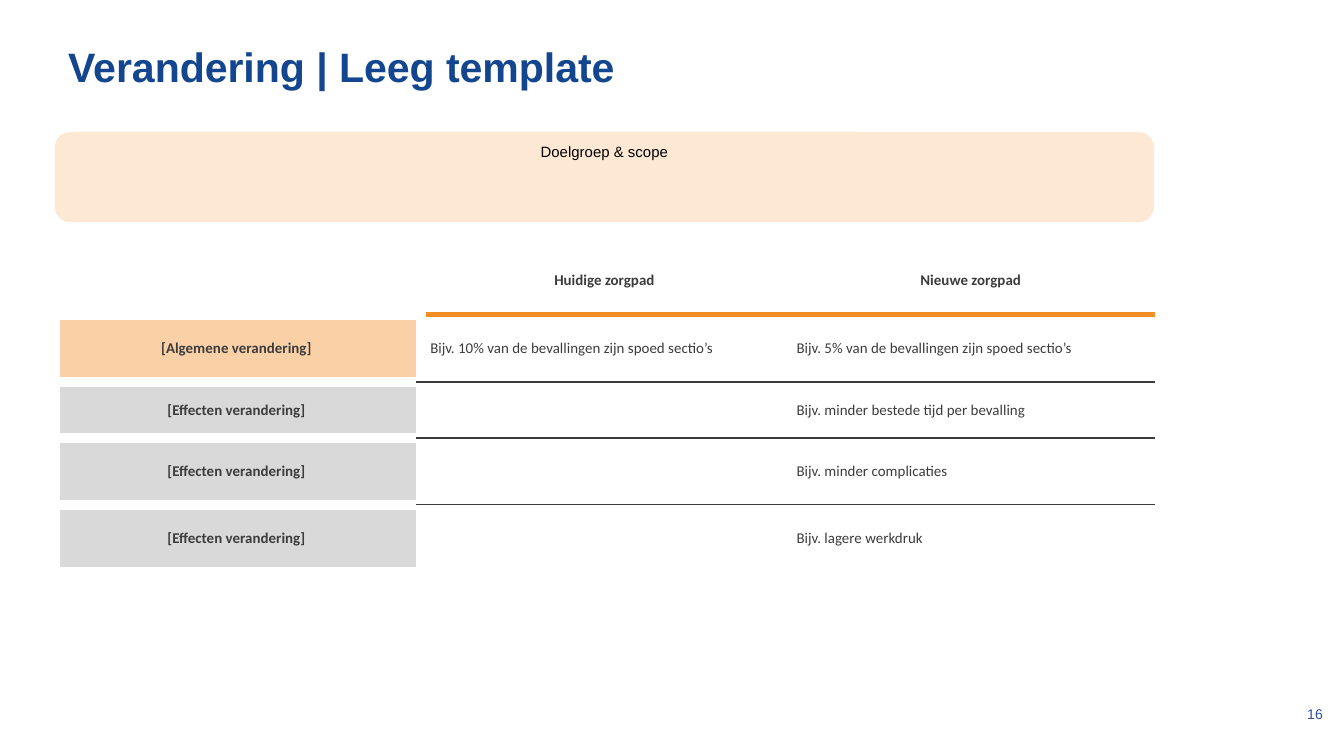
from dataclasses import dataclass

from lxml.etree import SubElement
from pptx import Presentation
from pptx.dml.color import RGBColor
from pptx.enum.shapes import MSO_SHAPE as Shape
from pptx.enum.text import MSO_ANCHOR as Anchor, PP_ALIGN as Align
from pptx.oxml.ns import qn
from pptx.util import Emu, Pt

PIXELS_PER_INCH = 134.4
WHITE, ORANGE, DARK = "FFFFFF", "F38D24", "3C3C3C"
PEACH, GREY = "FAD1A7", "D9D9D9"
LEFT, WIDTH = 55, 1099


@dataclass(frozen=True)
class Line:
    color: str
    points: float


@dataclass(frozen=True)
class Row:
    height: int
    label: str
    current: str
    new: str
    label_fill: str | None
    bottom: Line


GAP = Line(WHITE, 6.3)
FINE = Line(WHITE, 1.05)
ACCENT = Line(ORANGE, 3)
RULE = Line(DARK, 0.75)
EFFECT = "[Effecten verandering] "

ROWS = [
    Row(70, "", "Huidige zorgpad", "Nieuwe zorgpad", None, ACCENT),
    Row(67, "[Algemene verandering] ",
        "Bijv. 10% van de bevallingen zijn spoed sectio’s",
        "Bijv. 5% van de bevallingen zijn spoed sectio’s", PEACH, RULE),
    Row(56, EFFECT, "", "Bijv. minder bestede tijd per bevalling", GREY, RULE),
    Row(67, EFFECT, "", "Bijv. minder complicaties", GREY, RULE),
    Row(67, EFFECT, "", "Bijv. lagere werkdruk", GREY, GAP),
]


def px(length: int) -> Emu:
    return Emu(round(length * 914400 / PIXELS_PER_INCH))


def rgb(color: str) -> RGBColor:
    return RGBColor.from_string(color)


def write(frame, text: str, size: float, font: str, color: str,
          bold: bool = False, align: Align = Align.LEFT) -> None:
    frame.word_wrap = True
    paragraph = frame.paragraphs[0]
    paragraph.text = text
    paragraph.alignment = align
    paragraph.font.size = Pt(size)
    paragraph.font.name = font
    paragraph.font.bold = bold
    paragraph.font.color.rgb = rgb(color)


def add_text(slide, left: int, top: int, width: int, height: int, text: str,
             size: float, color: str, bold: bool, anchor: Anchor) -> None:
    box = slide.shapes.add_textbox(px(left), px(top), px(width), px(height))
    box.text_frame.vertical_anchor = anchor
    write(box.text_frame, text, size, "Arial", color, bold)


def set_borders(cell, left: Line, right: Line, top: Line, bottom: Line) -> None:
    properties = cell._tc.get_or_add_tcPr()
    sides = {"a:lnL": left, "a:lnR": right, "a:lnT": top, "a:lnB": bottom}
    for index, (tag, line) in enumerate(sides.items()):
        border = SubElement(properties, qn(tag), w=str(Pt(line.points)))
        fill = SubElement(border, qn("a:solidFill"))
        SubElement(fill, qn("a:srgbClr"), val=line.color)
        properties.insert(index, border)


def fill_cell(cell, text: str, fill: str | None, bold: bool, align: Align) -> None:
    cell.vertical_anchor = Anchor.MIDDLE
    cell.margin_left = cell.margin_right = px(9)
    cell.margin_top = cell.margin_bottom = px(4)
    if fill:
        cell.fill.solid()
        cell.fill.fore_color.rgb = rgb(fill)
    else:
        cell.fill.background()
    write(cell.text_frame, text, 8, "Calibri", DARK, bold, align)


def add_comparison(slide, top: int, rows: list[Row]) -> None:
    height = sum(row.height for row in rows)
    table = slide.shapes.add_table(
        len(rows), 3, px(LEFT), px(top), px(WIDTH), px(height)).table
    table.first_row = table.horz_banding = False
    for column in table.columns:
        column.width = px(WIDTH) // 3
    line_above = FINE
    for index, row in enumerate(rows):
        table.rows[index].height = px(row.height)
        is_header = index == 0
        for column, text in enumerate((row.label, row.current, row.new)):
            cell = table.cell(index, column)
            is_label = column == 0
            strong = is_header or is_label
            fill_cell(cell, text, row.label_fill if is_label else None,
                      strong, Align.CENTER if strong else Align.LEFT)
            edge = FINE if is_header else GAP
            if is_label:
                set_borders(cell, edge, edge, edge, GAP)
            else:
                set_borders(cell, edge if column == 1 else FINE, FINE,
                            line_above, row.bottom)
        line_above = row.bottom


def add_scope(slide, top: int, height: int, text: str) -> None:
    shape = slide.shapes.add_shape(
        Shape.ROUNDED_RECTANGLE, px(LEFT), px(top), px(WIDTH), px(height))
    shape.shadow.inherit = False
    shape.fill.solid()
    shape.fill.fore_color.rgb = rgb("FDE8D3")
    shape.line.fill.background()
    shape.text_frame.vertical_anchor = Anchor.TOP
    write(shape.text_frame, text, 8, "Arial", "000000", align=Align.CENTER)


def main() -> None:
    presentation = Presentation()
    presentation.slide_width, presentation.slide_height = px(1344), px(756)
    slide = presentation.slides.add_slide(presentation.slide_layouts[6])
    add_text(slide, 1294, 698, 52, 31, "16", 7.5, "2D4F9E", False, Anchor.MIDDLE)
    add_text(slide, LEFT, 35, 1234, 133, "Verandering | Leeg template",
             22, "13468F", True, Anchor.TOP)
    add_comparison(slide, 245, ROWS)
    add_scope(slide, 132, 90, "Doelgroep & scope")
    presentation.save("out.pptx")


if __name__ == "__main__":
    main()
